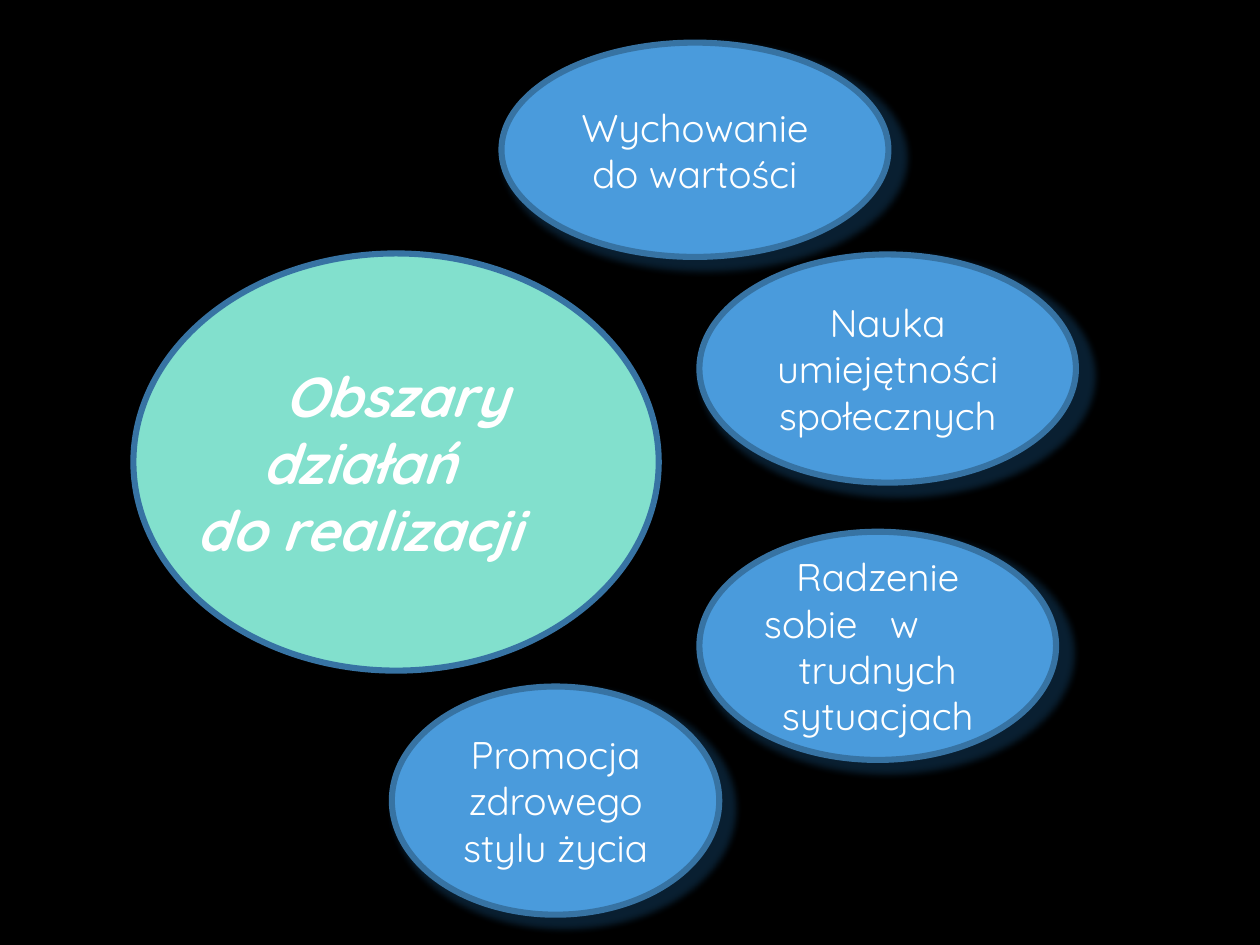
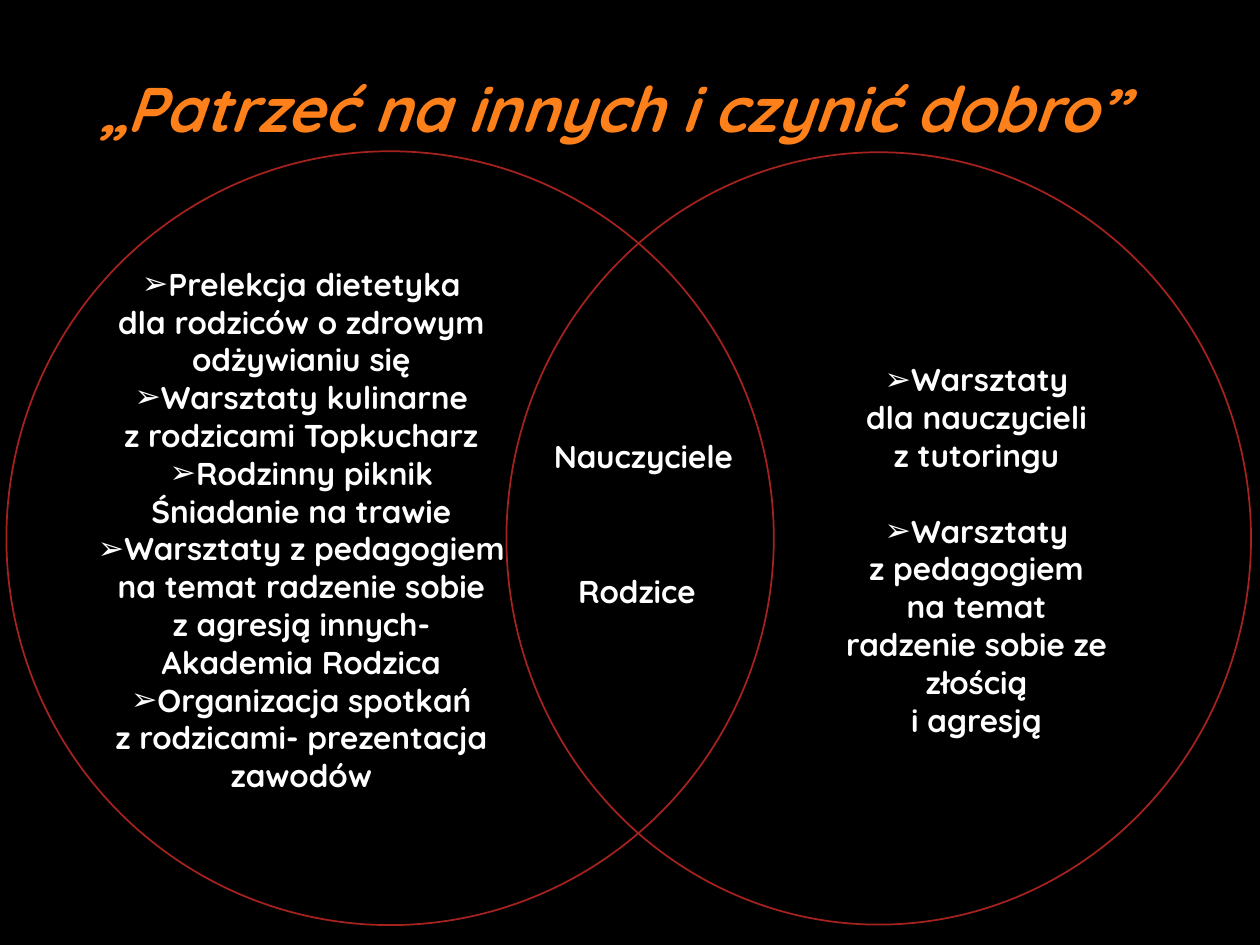
from dataclasses import dataclass
from lxml.etree import SubElement
from pptx import Presentation
from pptx.dml.color import RGBColor
from pptx.enum.shapes import MSO_SHAPE as SHAPE
from pptx.enum.text import MSO_ANCHOR as ANCHOR, MSO_AUTO_SIZE as AUTOSIZE, PP_ALIGN as ALIGN
from pptx.oxml.ns import qn
from pptx.util import Cm, Pt


@dataclass(frozen=True)
class Theme:
    font: str = "Quicksand"
    background: str = "000000"
    text: str = "FFFFFF"
    heading: str = "FE801A"
    area: str = "4A9BDC"
    center: str = "82E0CD"
    outline: str = "3773A3"
    shadow: str = "184F7B"
    ring: str = "A5221E"
    heading_size: float = 36
    center_size: float = 32
    area_size: float = 22
    body_size: float = 18


@dataclass(frozen=True)
class Para:
    text: str
    bullet: bool = False
    align: ALIGN = ALIGN.CENTER
    before: float = 0
    right: float = 0
    tab: float = 0


THEME = Theme()

AREAS = [
    ((10.11, 0.86, 7.8, 4.32), [Para("Wychowanie do wartości")]),
    ((14.1, 5.13, 7.59, 4.6), [Para("Nauka umiejętności społecznych")]),
    ((14.1, 10.72, 7.19, 4.6), [
        Para("Radzenie"),
        Para("sobie\tw", align=ALIGN.LEFT, tab=3.98),
        Para("trudnych sytuacjach"),
    ]),
    ((7.9, 13.84, 6.6, 4.6), [Para("Promocja zdrowego stylu życia")]),
]
CENTER_BOX = (2.69, 5.11, 10.59, 8.41)
CENTER_TITLE = [Para("Obszary"), Para("działań", right=1.5), Para("do realizacji")]

RINGS = [(10.21, 3.07, 15.01, 15.57), (0.13, 3.05, 15.47, 15.6)]
SHARED_GROUPS = [
    ((10.57, 8.69, 4.8, 1.02), "Nauczyciele"),
    ((10.44, 11.4, 4.8, 1.02), "Rodzice"),
]
PARENT_EVENTS = [
    Para("Prelekcja dietetyka", bullet=True),
    Para("dla rodziców o zdrowym odżywianiu się"),
    Para("Warsztaty kulinarne", bullet=True),
    Para("z rodzicami Topkucharz"),
    Para("Rodzinny piknik Śniadanie na trawie", bullet=True),
    Para("Warsztaty z pedagogiem na temat radzenie sobie", bullet=True),
    Para("z agresją innych- Akademia Rodzica"),
    Para("Organizacja spotkań", bullet=True),
    Para("z rodzicami- prezentacja zawodów"),
]
TEACHER_EVENTS = [
    Para("Warsztaty", bullet=True),
    Para("dla nauczycieli"),
    Para("z tutoringu"),
    Para("Warsztaty", bullet=True, before=21.6),
    Para("z pedagogiem"),
    Para("na temat radzenie sobie ze złością"),
    Para("i agresją"),
]


def rgb(color):
    return RGBColor.from_string(color)


def place(sp, box):
    sp.left, sp.top, sp.width, sp.height = map(Cm, box)


def format_paragraph(p, para):
    p.alignment = para.align
    p.line_spacing = 1.0
    p.space_before = Pt(para.before)
    p.space_after = Pt(0)
    pPr = p._p.get_or_add_pPr()
    pPr.set("marL", "0")
    pPr.set("indent", "0")
    if para.right:
        pPr.set("marR", str(Cm(para.right)))
    if para.bullet:
        SubElement(pPr, qn("a:buChar"), char="➢")
    else:
        SubElement(pPr, qn("a:buNone"))
    if para.tab:
        tabs = SubElement(pPr, qn("a:tabLst"))
        SubElement(tabs, qn("a:tab"), pos=str(Cm(para.tab)), algn="l")


def write(sp, paras, size, color=THEME.text, bold=False, italic=False, anchor=ANCHOR.TOP):
    tf = sp.text_frame
    tf.word_wrap = True
    tf.auto_size = AUTOSIZE.NONE
    tf.vertical_anchor = anchor
    for i, para in enumerate(paras):
        p = tf.add_paragraph() if i else tf.paragraphs[0]
        format_paragraph(p, para)
        r = p.add_run()
        r.text = para.text
        r.font.name = THEME.font
        r.font.size = Pt(size)
        r.font.bold = bold
        r.font.italic = italic
        r.font.color.rgb = rgb(color)


def add_slide(prs, layout):
    s = prs.slides.add_slide(prs.slide_layouts[layout])
    s.background.fill.solid()
    s.background.fill.fore_color.rgb = rgb(THEME.background)
    return s


def add_round(s, kind, box, line, width, fill=None):
    sp = s.shapes.add_shape(kind, *map(Cm, box))
    sp.shadow.inherit = False
    if fill:
        sp.fill.solid()
        sp.fill.fore_color.rgb = rgb(fill)
    else:
        sp.fill.background()
    sp.line.color.rgb = rgb(line)
    sp.line.width = Pt(width)
    return sp


def cast_shadow(sp):
    effects = sp._element.spPr.find(qn("a:effectLst"))
    shadow = SubElement(effects, qn("a:outerShdw"), blurRad=str(Pt(4)), dist=str(Pt(3)),
                        dir="2700000", sx="103000", sy="103000", algn="tl", rotWithShape="0")
    color = SubElement(shadow, qn("a:srgbClr"), val=THEME.shadow)
    SubElement(color, qn("a:alpha"), val="40000")


def add_area(s, box, paras):
    sp = add_round(s, SHAPE.OVAL, box, THEME.outline, 3.5, THEME.area)
    cast_shadow(sp)
    write(sp, paras, THEME.area_size, anchor=ANCHOR.MIDDLE)


def add_label(s, box, text):
    sp = s.shapes.add_textbox(*map(Cm, box))
    write(sp, [Para(text)], THEME.body_size, bold=True)


def set_title(s, box, paras, size, color, anchor):
    title = s.shapes.title
    place(title, box)
    write(title, paras, size, color, bold=True, italic=True, anchor=anchor)
    s.shapes._spTree.append(title._element)


def set_list(s, index, box, paras):
    body = s.placeholders[index]
    place(body, box)
    write(body, paras, THEME.body_size, bold=True)


def build_areas(prs):
    s = add_slide(prs, 5)
    for box, paras in AREAS:
        add_area(s, box, paras)
    add_round(s, SHAPE.OVAL, CENTER_BOX, THEME.outline, 3.5, THEME.center)
    set_title(s, CENTER_BOX, CENTER_TITLE, THEME.center_size, THEME.text, ANCHOR.MIDDLE)


def build_events(prs):
    s = add_slide(prs, 3)
    heading = Para("„Patrzeć na innych i czynić dobro”", align=ALIGN.LEFT)
    set_title(s, (1.75, 1.27, 22.23, 1.8), [heading], THEME.heading_size,
              THEME.heading, ANCHOR.TOP)
    for box in RINGS:
        add_round(s, SHAPE.FLOWCHART_CONNECTOR, box, THEME.ring, 1)
    for box, text in SHARED_GROUPS:
        add_label(s, box, text)
    set_list(s, 1, (1.68, 5.21, 8.79, 11.79), PARENT_EVENTS)
    set_list(s, 2, (16.69, 7.14, 5.99, 7.95), TEACHER_EVENTS)


def main():
    prs = Presentation()
    prs.slide_width, prs.slide_height = Cm(25.4), Cm(19.05)
    build_areas(prs)
    build_events(prs)
    prs.save("out.pptx")


if __name__ == "__main__":
    main()
